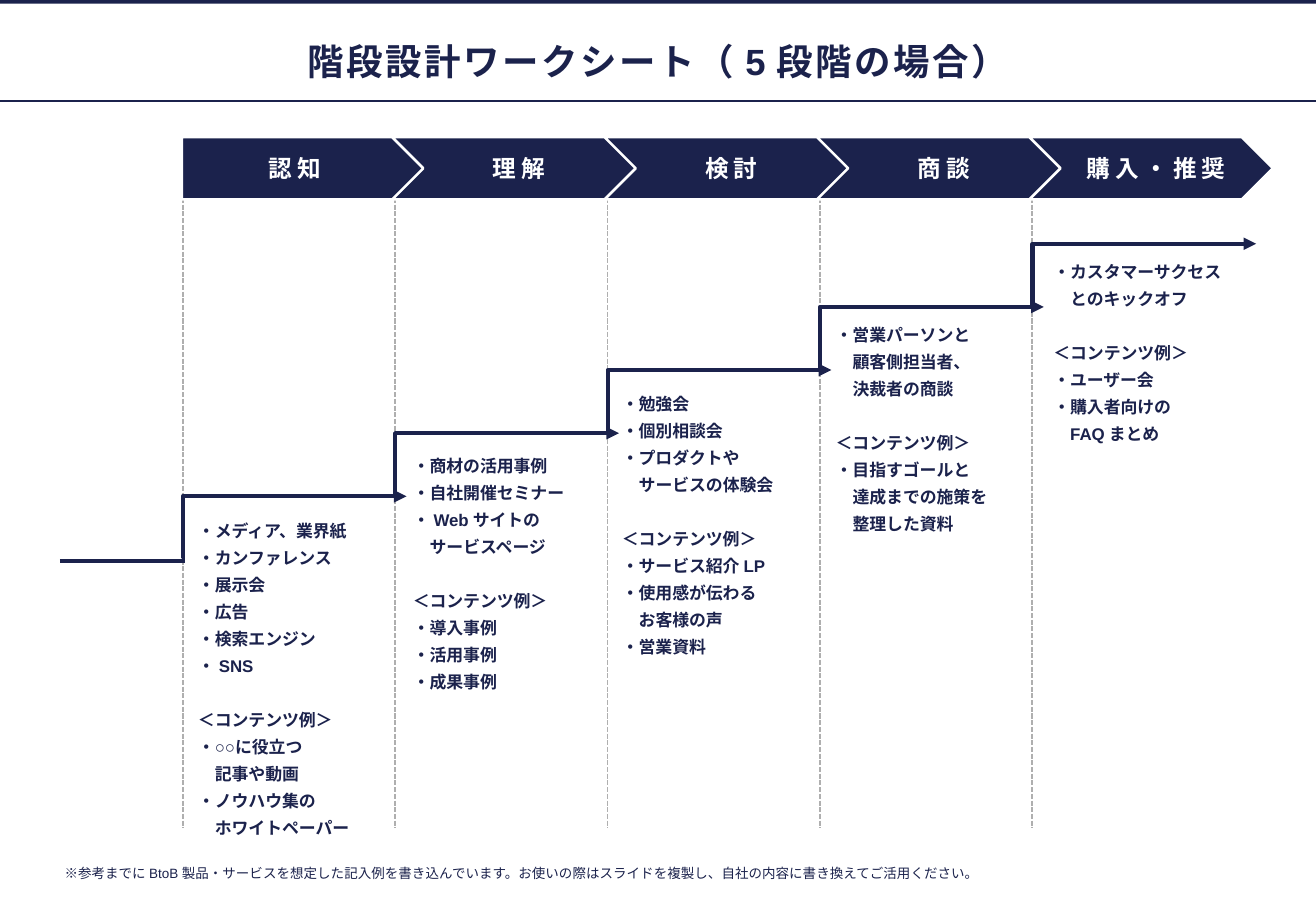
from lxml import etree
from pptx import Presentation
from pptx.dml.color import RGBColor
from pptx.enum.dml import MSO_LINE
from pptx.enum.lang import MSO_LANGUAGE_ID as Lang
from pptx.enum.shapes import MSO_CONNECTOR as Connector, MSO_SHAPE as Shape
from pptx.enum.text import MSO_ANCHOR as Anchor, PP_ALIGN as Align
from pptx.oxml.ns import qn
from pptx.util import Cm, Pt

NAVY, GREY, WHITE = "1B224C", "AFAFAF", "FFFFFF"
FONT = "Arial"
SLIDE_W, SLIDE_H = 27.51, 19.05
STAGE_LEFT, STAGE_PITCH = 3.8, 4.44
STEP_TOP, STEP_RISE = 10.38, 1.32
EXAMPLES = "＜コンテンツ例＞"

# Stage name, offset of its notes from the step corner, notes.
# A leading ">" marks a line that continues the entry above.
STAGES = [
    ("認知", 0.24, 0.41, [
        "・メディア、業界紙", "・カンファレンス", "・展示会", "・広告",
        "・検索エンジン", "・SNS", EXAMPLES, "・○○に役立つ",
        ">記事や動画", "・ノウハウ集の", ">ホワイトペーパー"]),
    ("理解", 0.29, 0.36, [
        "・商材の活用事例", "・自社開催セミナー", "・Webサイトの",
        ">サービスページ", EXAMPLES, "・導入事例", "・活用事例", "・成果事例"]),
    ("検討", 0.22, 0.39, [
        "・勉強会", "・個別相談会", "・プロダクトや", ">サービスの体験会",
        EXAMPLES, "・サービス紹介LP", "・使用感が伝わる", ">お客様の声", "・営業資料"]),
    ("商談", 0.25, 0.26, [
        "・営業パーソンと", ">顧客側担当者、", ">決裁者の商談", EXAMPLES,
        "・目指すゴールと", ">達成までの施策を", ">整理した資料"]),
    ("購入・推奨", 0.36, 0.28, [
        "・カスタマーサクセス", ">とのキックオフ", EXAMPLES,
        "・ユーザー会", "・購入者向けの", ">FAQまとめ"]),
]


def rgb(color):
    return RGBColor.from_string(color)


def format_runs(paragraph, size, color=NAVY, bold=True, spacing=0):
    for run in paragraph.runs:
        font = run.font
        font.size, font.bold, font.name = Pt(size), bold, FONT
        font.color.rgb = rgb(color)
        font.language_id = Lang.JAPANESE
        props = run._r.get_or_add_rPr()
        etree.SubElement(props, qn("a:ea")).set("typeface", FONT)
        if spacing:
            props.set("spc", str(int(spacing * 100)))


def set_frame(frame, anchor=Anchor.TOP, wrap=True, left=0.1):
    frame.word_wrap, frame.vertical_anchor = wrap, anchor
    frame.margin_left = Cm(left)
    frame.margin_top = frame.margin_right = frame.margin_bottom = Cm(0.1)


def add_text(slide, x, y, w, h, **options):
    frame = slide.shapes.add_textbox(Cm(x), Cm(y), Cm(w), Cm(h)).text_frame
    set_frame(frame, **options)
    return frame


def add_line(slide, x1, y1, x2, y2, color, width, kind=Connector.STRAIGHT):
    line = slide.shapes.add_connector(kind, Cm(x1), Cm(y1), Cm(x2), Cm(y2))
    line.line.color.rgb, line.line.width = rgb(color), Pt(width)
    etree.SubElement(line._element.spPr, qn("a:effectLst"))
    return line


def add_header(slide, x, y, w):
    # Top band, title and rule
    band = slide.shapes.add_shape(Shape.RECTANGLE, Cm(x), Cm(y), Cm(w), Cm(0.08))
    band.shadow.inherit = False
    band.fill.solid()
    band.fill.fore_color.rgb = rgb(NAVY)
    band.line.fill.background()
    add_line(slide, x, y + 2.11, x + w, y + 2.11, NAVY, 1)
    title = add_text(slide, x + 1.25, y + 0.54, w - 2.5, 1,
                     anchor=Anchor.MIDDLE, wrap=False).paragraphs[0]
    title.text = "階段設計ワークシート（5段階の場合）"
    title.alignment, title.line_spacing = Align.CENTER, 1.5
    format_runs(title, 21.6, spacing=1.5)


def add_step(slide, x, y, w, h):
    # Riser followed by an arrow along the tread
    step = add_line(slide, x, y + h, x + w, y, NAVY, 2.5, Connector.ELBOW)
    bend = step._element.spPr.find(qn("a:prstGeom")).get_or_add_avLst()
    guide = etree.SubElement(bend, qn("a:gd"))
    guide.set("name", "adj1")
    guide.set("fmla", "val 500")
    outline = step.line._get_or_add_ln()
    etree.SubElement(outline, qn("a:tailEnd")).set("type", "triangle")


def add_stage_name(slide, x, y, w, h, name, text_left):
    banner = slide.shapes.add_shape(Shape.PENTAGON, Cm(x), Cm(y), Cm(w), Cm(h))
    banner.shadow.inherit = False
    banner.fill.solid()
    banner.fill.fore_color.rgb = rgb(NAVY)
    banner.line.color.rgb, banner.line.width = rgb(WHITE), Pt(1.5)
    set_frame(banner.text_frame, Anchor.MIDDLE, left=text_left)
    label = banner.text_frame.paragraphs[0]
    label.text, label.alignment = name, Align.CENTER
    format_runs(label, 14, WHITE, spacing=3)


def add_notes_list(slide, x, y, w, h, entries):
    frame = add_text(slide, x, y, w, h)
    frame.text = "\n".join(entry.lstrip(">") for entry in entries)
    for paragraph, entry in zip(frame.paragraphs, entries):
        paragraph.space_after = Pt(4)
        if entry == EXAMPLES:
            paragraph.space_before = Pt(16)
        if entry.startswith(">"):
            paragraph._p.get_or_add_pPr().set("marL", str(Pt(10)))
        format_runs(paragraph, 10)


def add_staircase(slide, x, y, pitch):
    # Dashed column guides
    for i in range(len(STAGES)):
        guide_x = x + 0.02 + i * pitch
        guide = add_line(slide, guide_x, y + 0.15, guide_x, y + 14.45, GREY, 1)
        guide.line.dash_style = MSO_LINE.SQUARE_DOT
    # Ground level, steps and notes
    add_line(slide, x - 2.55, STEP_TOP + 1.35, x + 0.06, STEP_TOP + 1.35, NAVY, 2.5)
    for i, (_, dx, dy, entries) in enumerate(STAGES):
        step_x, step_y = x + i * pitch, STEP_TOP - i * STEP_RISE
        add_step(slide, step_x, step_y, 4.7, 1.3)
        add_notes_list(slide, step_x + dx, step_y + dy, 4.2, 7, entries)
    # Stage names, each overlapping the next
    for i, (name, *_) in reversed(list(enumerate(STAGES))):
        add_stage_name(slide, x + i * pitch, y, 5.05, 1.3, name, 0.6 if i else 0.1)


def add_footnote(slide, x, y, w, h):
    note = add_text(slide, x, y, w, h, anchor=Anchor.MIDDLE).paragraphs[0]
    note.text = ("※参考までにBtoB製品・サービスを想定した記入例を書き込んでいます。"
                 "お使いの際はスライドを複製し、自社の内容に書き換えてご活用ください。")
    format_runs(note, 8, bold=False)


def main():
    deck = Presentation()
    deck.slide_width, deck.slide_height = Cm(SLIDE_W), Cm(SLIDE_H)
    slide = deck.slides.add_slide(deck.slide_layouts[6])
    add_header(slide, 0, 0, SLIDE_W)
    add_staircase(slide, STAGE_LEFT, 2.87, STAGE_PITCH)
    add_footnote(slide, 1.25, 18.06, 21.9, 0.4)
    deck.save("out.pptx")


if __name__ == "__main__":
    main()
